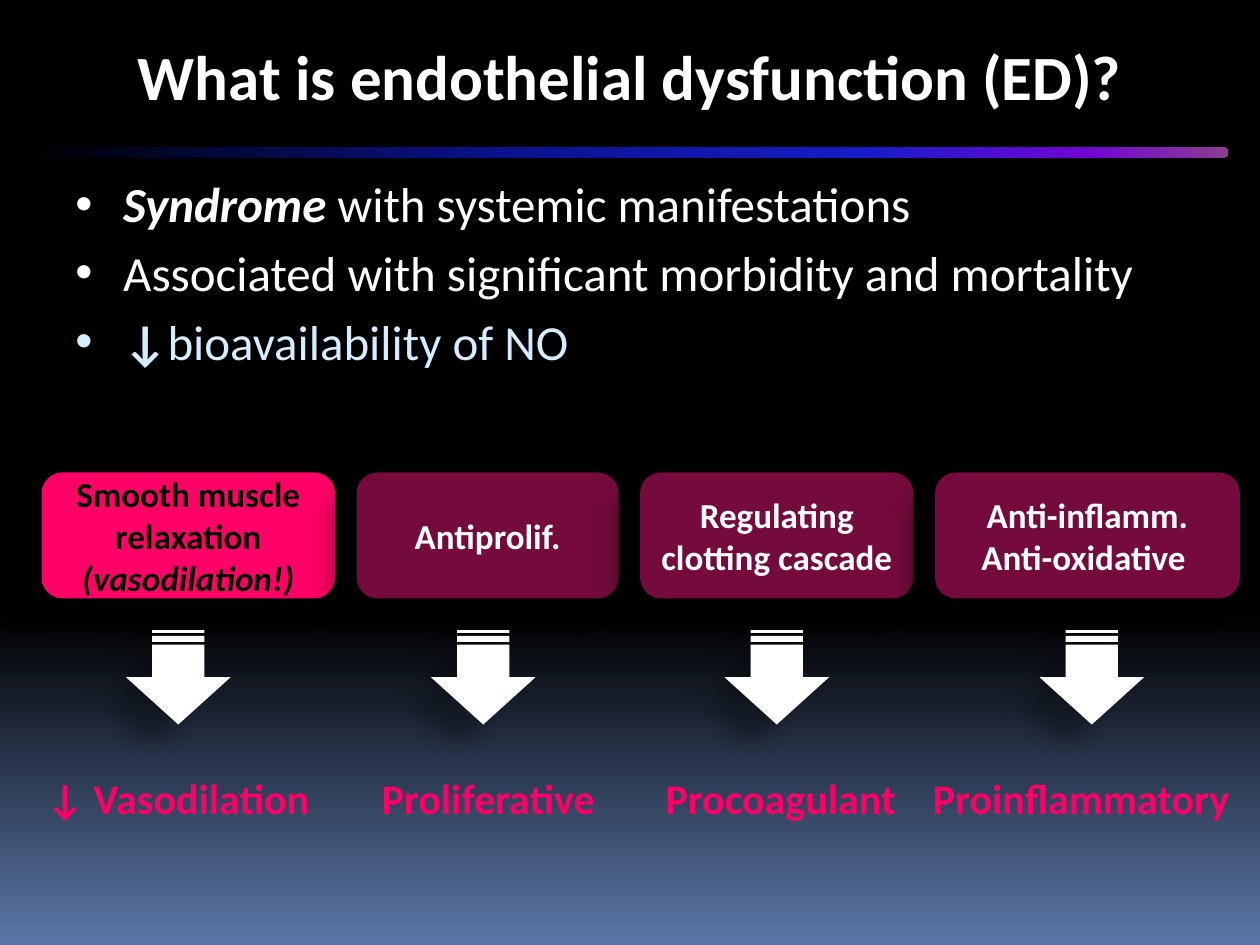
"""Build the slide that explains endothelial dysfunction and its four effects."""
from dataclasses import dataclass

from lxml import etree
from pptx import Presentation
from pptx.dml.color import RGBColor
from pptx.enum import shapes, text
from pptx.oxml.ns import qn
from pptx.shapes.autoshape import Shape
from pptx.slide import Slide
from pptx.util import Inches, Pt


@dataclass(frozen=True)
class Theme:
    font: str = "Calibri"
    white: str = "FFFFFF"
    black: str = "000000"
    pink: str = "FF0066"
    wine: str = "750B3D"
    ice: str = "D6ECFF"
    title_size: int = 36
    bullet_size: int = 28
    label_size: int = 24
    box_size: int = 20
    sky: tuple = ((0, "000000"), (65, "000000"), (100, "5B77A8"))
    rule: tuple = ((0, "000000"), (40, "0A128C"), (70, "181CC7"),
                   (88, "7005D4"), (100, "8C3D91"))


@dataclass(frozen=True)
class Run:
    words: str
    color: str = "FFFFFF"
    bold: bool = True
    italic: bool = False


@dataclass(frozen=True)
class Effect:
    left: float
    width: float
    fill: str
    lines: tuple
    arrow_left: float
    label: str
    label_left: float
    label_width: float


Lines = tuple[tuple[Run, ...], ...]
THEME = Theme()
CENTER = text.PP_ALIGN.CENTER

BULLETS: Lines = (
    (Run("Syndrome", italic=True), Run(" with systemic manifestations", bold=False)),
    (Run("Associated with significant morbidity and mortality", bold=False),),
    (Run("↓", THEME.ice), Run("bioavailability of NO", THEME.ice, False)),
)
EFFECTS = (
    Effect(0.33, 2.33, THEME.pink,
           ((Run("Smooth muscle relaxation", THEME.black),),
            (Run("(vasodilation!)", THEME.black, italic=True),)),
           1.04, "↓ Vasodilation", 0.25, 2.32),
    Effect(2.83, 2.08, THEME.wine, ((Run("Antiprolif."),),),
           3.46, "Proliferative", 2.92, 1.91),
    Effect(5.08, 2.17, THEME.wine, ((Run("Regulating clotting cascade "),),),
           5.79, "Procoagulant", 5.17, 2.05),
    Effect(7.42, 2.42, THEME.wine,
           ((Run("Anti-inflamm."),), (Run("Anti-oxidative "),)),
           8.29, "Proinflammatory", 7.25, 2.66),
)


def add_child(parent, tag: str, **attributes):
    """Append a drawing element with its attributes."""
    values = {name: str(value) for name, value in attributes.items()}
    return etree.SubElement(parent, qn(tag), values)


def set_gradient(element, stops: tuple, angle: int) -> None:
    """Replace the first solid fill in an element with a linear gradient."""
    solid = element.find(".//" + qn("a:solidFill"))
    gradient = etree.Element(qn("a:gradFill"), rotWithShape="1")
    stop_list = add_child(gradient, "a:gsLst")
    for position, color in stops:
        stop = add_child(stop_list, "a:gs", pos=position * 1000)
        add_child(stop, "a:srgbClr", val=color)
    add_child(gradient, "a:lin", ang=angle * 60000, scaled=0)
    solid.getparent().replace(solid, gradient)


def add_shadow(shape: Shape) -> None:
    """Cast a soft shadow to the lower left."""
    effects = shape.element.spPr.find(qn("a:effectLst"))
    shadow = add_child(effects, "a:outerShdw", blurRad=Pt(11.8), dist=Pt(19.7),
                       dir=141 * 60000, algn="ctr", rotWithShape=0)
    color = add_child(shadow, "a:srgbClr", val=THEME.black)
    add_child(color, "a:alpha", val=28000)


def write(shape: Shape, lines: Lines, size: int, alignment=CENTER) -> None:
    """Write styled runs, one paragraph for each line."""
    frame = shape.text_frame
    for index, line in enumerate(lines):
        paragraph = frame.add_paragraph() if index else frame.paragraphs[0]
        paragraph.alignment = alignment
        for item in line:
            run = paragraph.add_run()
            run.text = item.words
            run.font.name = THEME.font
            run.font.size = Pt(size)
            run.font.bold = item.bold
            run.font.italic = item.italic
            run.font.color.rgb = RGBColor.from_string(item.color)


def add_text(slide: Slide, left: float, top: float, width: float, height: float,
             lines: Lines, size: int, alignment=CENTER, wrap: bool = True) -> Shape:
    """Add a text box."""
    box = slide.shapes.add_textbox(Inches(left), Inches(top), Inches(width), Inches(height))
    box.text_frame.word_wrap = wrap
    if not wrap:
        box.text_frame.auto_size = text.MSO_AUTO_SIZE.SHAPE_TO_FIT_TEXT
    write(box, lines, size, alignment)
    return box


def add_block(slide: Slide, kind: shapes.MSO_SHAPE, left: float, top: float,
              width: float, height: float, fill: str) -> Shape:
    """Add a filled preset shape without outline."""
    shape = slide.shapes.add_shape(kind, Inches(left), Inches(top),
                                   Inches(width), Inches(height))
    shape.fill.solid()
    shape.fill.fore_color.rgb = RGBColor.from_string(fill)
    shape.line.fill.background()
    shape.shadow.inherit = False
    return shape


def add_bullets(slide: Slide) -> None:
    """Add the bulleted statements."""
    body = add_text(slide, 0.5, 1.33, 9, 1.83, BULLETS, THEME.bullet_size,
                    text.PP_ALIGN.JUSTIFY)
    for paragraph in body.text_frame.paragraphs:
        properties = paragraph._p.get_or_add_pPr()
        properties.set("marL", str(Inches(0.38)))
        properties.set("indent", str(-Inches(0.38)))
        add_child(add_child(properties, "a:spcBef"), "a:spcPct", val=20000)
        add_child(properties, "a:buFont", typeface="Arial")
        add_child(properties, "a:buChar", char="•")


def add_effect(slide: Slide, effect: Effect) -> None:
    """Add one function of NO, an arrow and the result of its loss."""
    box = add_block(slide, shapes.MSO_SHAPE.ROUNDED_RECTANGLE,
                    effect.left, 3.75, effect.width, 1, effect.fill)
    box.text_frame.vertical_anchor = text.MSO_ANCHOR.MIDDLE
    write(box, effect.lines, THEME.box_size)
    arrow = add_block(slide, shapes.MSO_SHAPE.STRIPED_RIGHT_ARROW,
                      effect.arrow_left, 4.96, 0.75, 0.83, THEME.white)
    arrow.rotation = 90
    for shape in (box, arrow):
        add_shadow(shape)
    add_text(slide, effect.label_left, 6.08, effect.label_width, 0.5,
             ((Run(effect.label, THEME.pink),),), THEME.label_size, wrap=False)


def main() -> None:
    """Build and save the presentation."""
    presentation = Presentation()
    presentation.slide_width, presentation.slide_height = Inches(10), Inches(7.5)
    slide = presentation.slides.add_slide(presentation.slide_layouts[6])
    slide.background.fill.solid()
    slide.background.fill.fore_color.rgb = RGBColor.from_string(THEME.black)
    set_gradient(slide.element, THEME.sky, 90)
    add_text(slide, 0.25, 0.25, 9.5, 1.25,
             ((Run("What is endothelial dysfunction (ED)?"),),), THEME.title_size)
    rule = add_block(slide, shapes.MSO_SHAPE.ROUNDED_RECTANGLE,
                     0.17, 1.17, 9.58, 0.08, THEME.black)
    rule.adjustments[0] = 0.5
    set_gradient(rule.element, THEME.rule, 0)
    add_bullets(slide)
    for effect in EFFECTS:
        add_effect(slide, effect)
    presentation.save("out.pptx")


if __name__ == "__main__":
    main()
